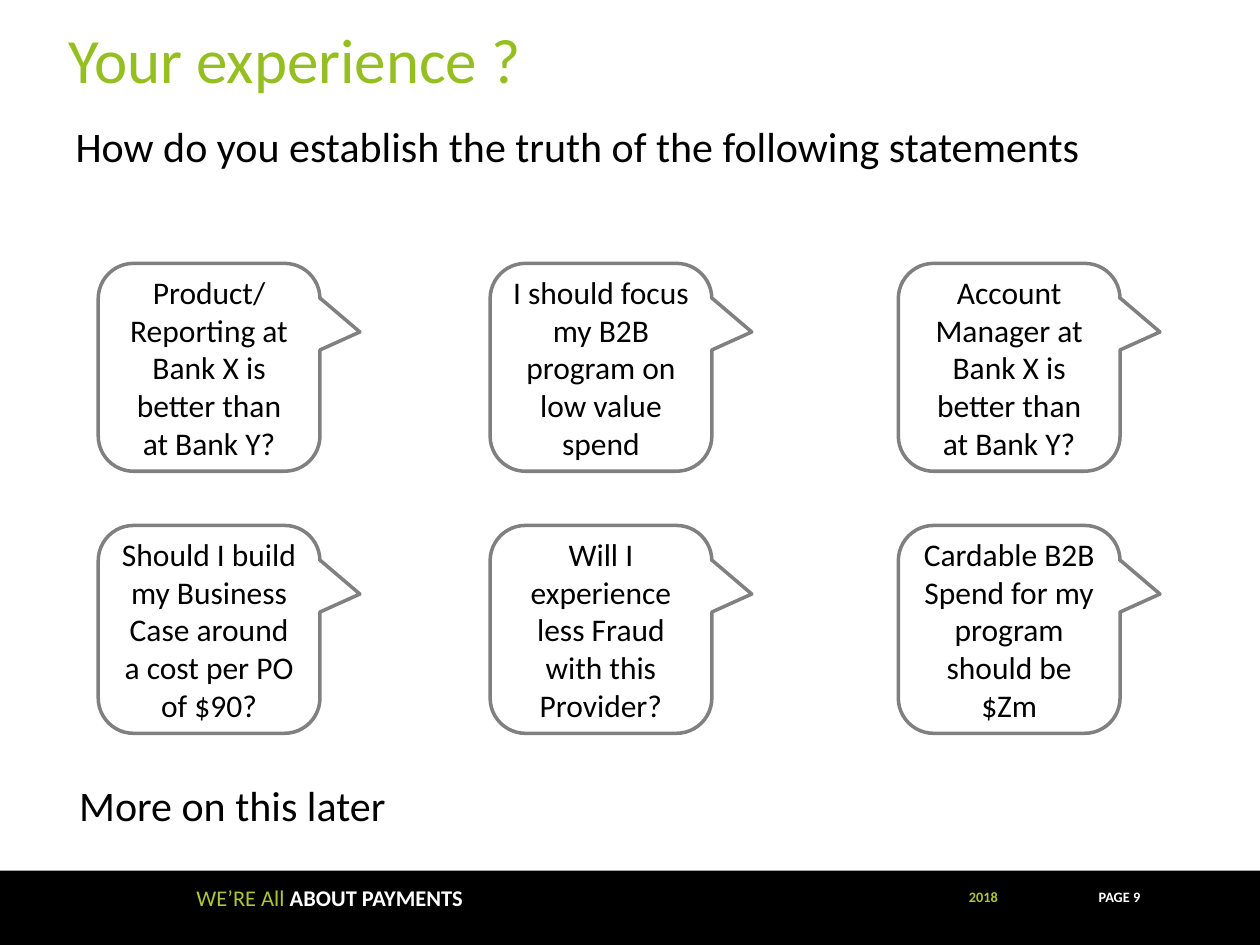
"""Build the "Your experience ?" slide on a grid of 100 columns by 75 rows."""
from dataclasses import dataclass
from itertools import product

from lxml.etree import SubElement
from pptx import Presentation
from pptx.dml.color import RGBColor
from pptx.enum.shapes import MSO_SHAPE
from pptx.enum.text import MSO_ANCHOR, MSO_AUTO_SIZE, PP_ALIGN
from pptx.oxml.ns import qn
from pptx.util import Inches, Pt

BLACK = RGBColor(0x00, 0x00, 0x00)
WHITE = RGBColor(0xFF, 0xFF, 0xFF)
GRAY = RGBColor(0x80, 0x80, 0x80)
GREEN = RGBColor(0x95, 0xBF, 0x20)
LIME = RGBColor(0xAE, 0xC5, 0x36)

FONT = "Calibri"
COLS, ROWS = 100, 75
CELL = Inches(0.1)


@dataclass(frozen=True)
class Box:
    """A rectangle in grid columns and rows."""
    col: float
    row: float
    width: float
    height: float

    def emu(self) -> list[int]:
        """Return left, top, width and height as lengths."""
        return [round(n * CELL) for n in (self.col, self.row, self.width, self.height)]


@dataclass(frozen=True)
class Label:
    """A run of footer text."""
    text: str
    color: RGBColor
    bold: bool = True


@dataclass(frozen=True)
class Footer:
    """A footer line with its place, type size and line height."""
    box: Box
    size: float
    leading: float
    labels: tuple[Label, ...]


FOOTERS = (
    Footer(Box(76.8, 70.7, 8.9, 1.8), 8.2, 8.6, (Label("2018", LIME),)),
    Footer(Box(15.5, 70.5, 28.3, 2.6), 12.8, 12.9,
           (Label("WE’RE All ", LIME, False), Label("ABOUT PAYMENTS", WHITE))),
    Footer(Box(87.1, 70.7, 4.9, 1.8), 8.2, 8.6, (Label("PAGE 9", WHITE),)),
)
CALLOUT_COLS = (7.8, 38.9, 71.3)
CALLOUT_ROWS = (20.9, 41.7)
STATEMENTS = (
    "Product/Reporting at Bank X is better than at Bank Y?",
    "I should focus my B2B program on low value spend",
    "Account Manager at Bank X is better than at Bank Y?",
    "Should I build my Business Case around a cost per PO of $90?",
    "Will I experience less Fraud with this Provider?",
    "Cardable B2B Spend for my program should be $Zm",
)


def style(r, size: float, color: RGBColor, bold: bool = False) -> None:
    """Format one run."""
    r.font.name = FONT
    r.font.size = Pt(size)
    r.font.bold = bold
    r.font.color.rgb = color


def write(sp, text: str, size: float, color: RGBColor, align=PP_ALIGN.LEFT,
          anchor=MSO_ANCHOR.TOP, wrap: bool = True) -> None:
    """Fill a shape with one formatted paragraph."""
    tf = sp.text_frame
    tf.text = text
    tf.word_wrap = wrap
    tf.auto_size = MSO_AUTO_SIZE.NONE
    tf.vertical_anchor = anchor
    p = tf.paragraphs[0]
    p.alignment = align
    p.space_before = Pt(0)
    style(p.runs[0], size, color)


def place(sp, box: Box) -> None:
    """Move a placeholder to a box."""
    sp.left, sp.top, sp.width, sp.height = box.emu()


def add_bar(slide, box: Box) -> None:
    """Draw the footer band."""
    sp = slide.shapes.add_shape(MSO_SHAPE.RECTANGLE, *box.emu())
    sp.shadow.inherit = False
    sp.fill.solid()
    sp.fill.fore_color.rgb = BLACK
    sp.line.fill.background()


def add_footer(slide, footer: Footer) -> None:
    """Draw one footer line."""
    tf = slide.shapes.add_textbox(*footer.box.emu()).text_frame
    tf.word_wrap = True
    tf.margin_left = tf.margin_right = tf.margin_top = tf.margin_bottom = 0
    p = tf.paragraphs[0]
    p.line_spacing = Pt(footer.leading)
    p._p.get_or_add_pPr().set("marL", str(Inches(0.01)))
    for label in footer.labels:
        r = p.add_run()
        r.text = label.text
        style(r, footer.size, label.color, label.bold)


def add_callout(slide, box: Box, text: str) -> None:
    """Draw one speech bubble."""
    sp = slide.shapes.add_shape(MSO_SHAPE.ROUNDED_RECTANGULAR_CALLOUT, *box.emu())
    for i, value in enumerate((0.68, -0.17, 0.17)):
        sp.adjustments[i] = value
    sp.shadow.inherit = False
    sp.fill.background()
    sp.line.color.rgb = GRAY
    sp.line.width = Pt(2)
    write(sp, text, 18, BLACK, PP_ALIGN.CENTER, MSO_ANCHOR.MIDDLE)


def main() -> None:
    """Build and save the slide."""
    prs = Presentation()
    prs.slide_width, prs.slide_height = COLS * CELL, ROWS * CELL
    slide = prs.slides.add_slide(prs.slide_layouts[1])

    title, body = slide.placeholders
    place(title, Box(4.4, 1.1, 64.3, 7.1))
    write(title, "Your experience ?", 36, GREEN)
    place(body, Box(5, 9.1, 87.8, 5))
    write(body, "How do you establish the truth of the following statements", 24, BLACK)
    pPr = body.text_frame.paragraphs[0]._p.get_or_add_pPr()
    pPr.set("marL", "0")
    pPr.set("indent", "0")
    SubElement(pPr, qn("a:buNone"))

    add_bar(slide, Box(0, 69.1, COLS, 5.9))
    for footer in FOOTERS:
        add_footer(slide, footer)
    for (row, col), text in zip(product(CALLOUT_ROWS, CALLOUT_COLS), STATEMENTS):
        add_callout(slide, Box(col, row, 17.6, 16.5), text)

    sp = slide.shapes.add_textbox(*Box(5.3, 61.4, 26.6, 5).emu())
    write(sp, "More on this later", 24, BLACK, wrap=False)
    prs.save("out.pptx")


if __name__ == "__main__":
    main()
